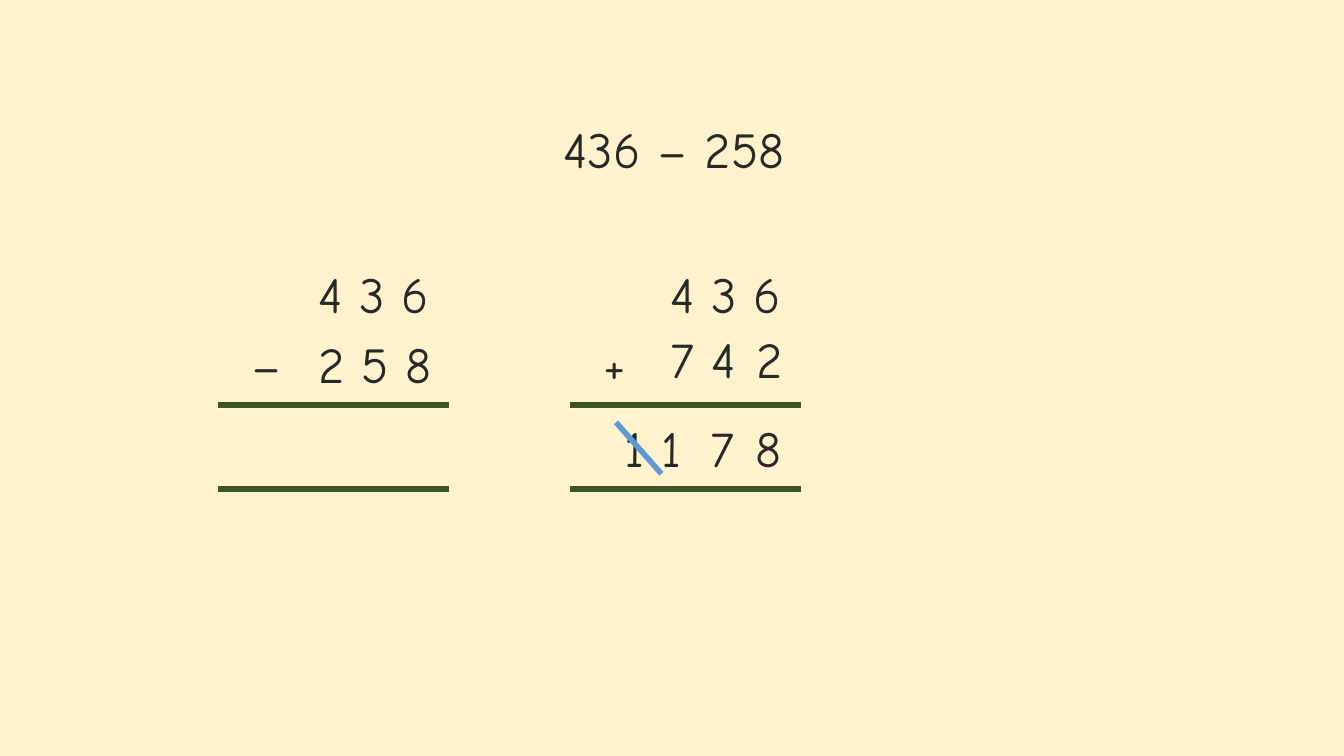
from lxml import etree
from pptx import Presentation
from pptx.dml.color import RGBColor
from pptx.enum import shapes, text
from pptx.oxml import ns
from pptx.util import Inches, Pt

CREAM = RGBColor(0xFF, 0xF2, 0xCC)
INK = RGBColor(0x25, 0x29, 0x27)
GREEN = RGBColor(0x38, 0x57, 0x23)
BLUE = RGBColor(0x5B, 0x9B, 0xD5)
FONT = "Comic Neue"
ROW_HEIGHT = 0.71
RULE_WIDTH = 2.29


def write(frame, wording):
    frame.word_wrap = False
    frame.auto_size = text.MSO_AUTO_SIZE.SHAPE_TO_FIT_TEXT
    frame.vertical_anchor = text.MSO_ANCHOR.TOP
    line = frame.paragraphs[0]
    line.alignment = text.PP_ALIGN.LEFT
    run = line.add_run()
    run.text = wording
    run.font.name = FONT
    run.font.size = Pt(36)
    run.font.color.rgb = INK


def add_number(slide, wording, left, top, width):
    number = slide.shapes.add_textbox(
        Inches(left), Inches(top), Inches(width), Inches(ROW_HEIGHT))
    write(number.text_frame, wording)


def add_stroke(parent, start, end, color):
    stroke = parent.add_connector(
        shapes.MSO_CONNECTOR.STRAIGHT, *map(Inches, (*start, *end)))
    stroke.line.color.rgb = color
    stroke.line.width = Pt(4)
    etree.SubElement(stroke._element.spPr, ns.qn("a:effectLst"))


def add_problem(slide, left, top, width):
    title = slide.shapes.title
    title.left, title.top = Inches(left), Inches(top)
    title.width, title.height = Inches(width), Inches(ROW_HEIGHT)
    write(title.text_frame, "436 – 258")


def add_sum_frame(slide, left, top, sign, sign_width):
    """Top number, operator and the two rules around the answer."""
    add_number(slide, "4 3 6", left + 0.9, top, 1.43)
    add_number(slide, sign, left + 0.24, top + 0.7, sign_width)
    rules = slide.shapes.add_group_shape().shapes
    for y in (top + 1.46, top + 2.29):
        add_stroke(rules, (left, y), (left + RULE_WIDTH, y), GREEN)


def add_subtraction(slide, left, top):
    add_sum_frame(slide, left, top, "–", 0.42)
    add_number(slide, "2 5 8", left + 0.9, top + 0.7, 1.43)


def add_complement_sum(slide, left, top):
    add_sum_frame(slide, left, top, "+", 0.44)
    # Complement, digit by digit
    for digit, x in zip("742", (0.9, 1.31, 1.75)):
        add_number(slide, digit, left + x, top + 0.65, 0.51)
    # Answer with its leading 1 crossed out
    answer_top = top + 1.53
    for digits, x, width in (("1 1", 0.45, 0.81), ("7", 1.3, 0.51), ("8", 1.74, 0.51)):
        add_number(slide, digits, left + x, answer_top, width)
    add_stroke(slide.shapes, (left + 0.46, answer_top + 0.1),
               (left + 0.91, answer_top + 0.61), BLUE)


def main():
    deck = Presentation()
    deck.slide_width, deck.slide_height = Inches(13.33), Inches(7.5)
    slide = deck.slides.add_slide(deck.slide_layouts.get_by_name("Title Only"))
    slide.background.fill.solid()
    slide.background.fill.fore_color.rgb = CREAM
    add_problem(slide, 5.49, 1.12, 2.58)
    add_subtraction(slide, 2.16, 2.56)
    add_complement_sum(slide, 5.65, 2.56)
    deck.save("out.pptx")


if __name__ == "__main__":
    main()
